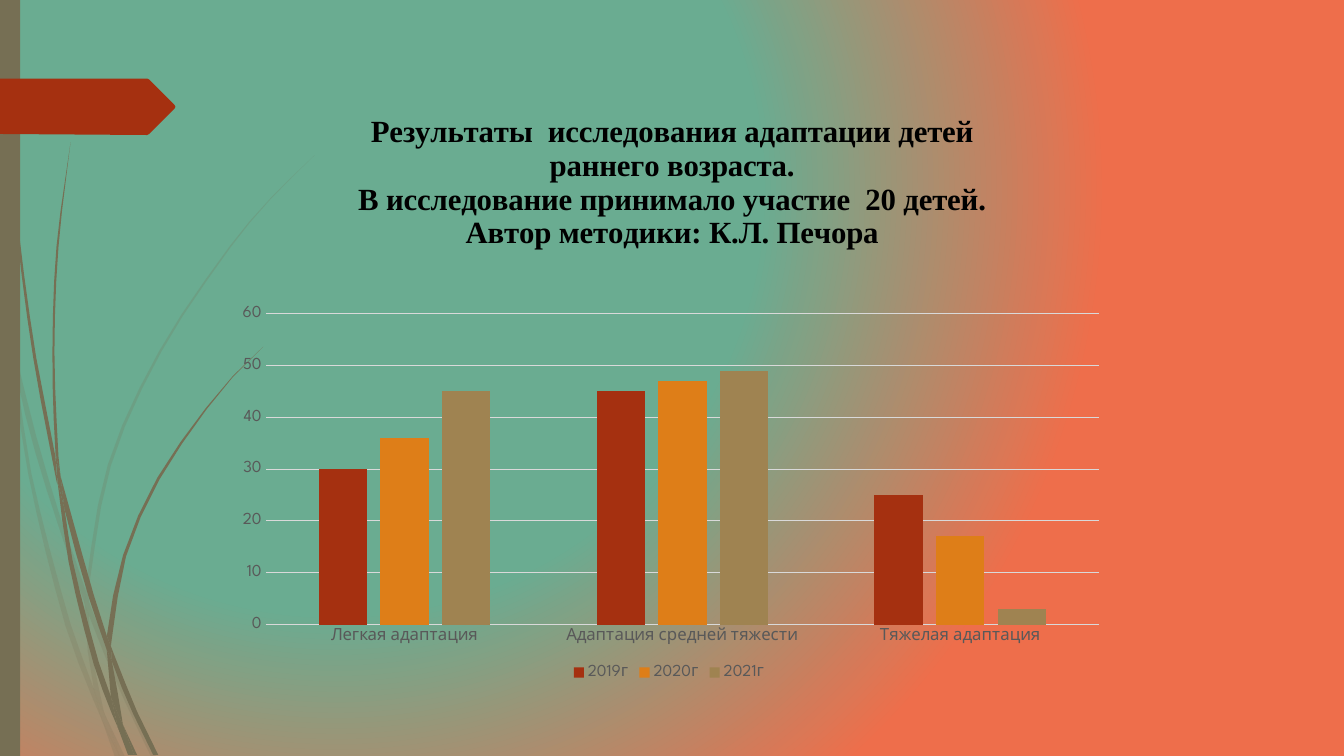
import dataclasses
import math

import lxml.etree
import pptx
import pptx.chart.data
import pptx.dml.color
import pptx.enum.chart
import pptx.enum.shapes
import pptx.enum.text
import pptx.oxml.ns
import pptx.util

Inches = pptx.util.Inches
qn = pptx.oxml.ns.qn


@dataclasses.dataclass(frozen=True)
class Theme:
    green: str = "6AAC91"
    coral: str = "EE6E4B"
    olive: str = "766F54"
    red: str = "A53010"
    orange: str = "DE7E18"
    sand: str = "9F8351"
    black: str = "000000"
    label: str = "595959"
    grid: str = "D9D9D9"
    body_font: str = "League Spartan"
    title_font: str = "Times New Roman"
    title_size: int = 22
    label_size: int = 12
    base_size: int = 10


THEME = Theme()

# Outline nodes of the stems, in inches
PALE_STEMS = [
    [(0.11, 3.5), (0.09, 3.22), (0, 2.82), (0, 2.99), (0.1, 3.44)],
    [(0.58, 5.22), (0.84, 5.99), (0.85, 5.86), (0.62, 5.2), (0.36, 4.33), (0.14, 3.45),
     (0.17, 3.76), (0.35, 4.49)],
    [(0.92, 6.07), (0.88, 5.96), (0.88, 6.1), (1.23, 6.94), (1.5, 7.51), (1.55, 7.51),
     (1.27, 6.92)],
    [(1.19, 7.51), (1.24, 7.51), (1.05, 7.11)],
    [(0.93, 6.83), (0.7, 6.19), (0.31, 4.69), (0.17, 3.76), (0.11, 3.5), (0.28, 4.7),
     (0.65, 6.21), (0.92, 6.93), (1.01, 7.14), (0.99, 7.07)],
    [(0.84, 5.99), (0.87, 6.46), (0.93, 6.83), (0.96, 6.92), (1.05, 7.11), (1.03, 7.06),
     (0.91, 6.46), (0.88, 6.1)],
    [(0.88, 5.84), (1.1, 4.62), (1.6, 3.49), (2.29, 2.45), (2.68, 1.98), (3.12, 1.54),
     (2.68, 1.97), (2.28, 2.44), (1.58, 3.48), (1.07, 4.61), (0.85, 5.84), (0.88, 5.96)],
    [(1.01, 7.14), (1.14, 7.51), (1.19, 7.51)],
    [(0.88, 6.1), (0.88, 5.96), (0.85, 5.86), (0.84, 5.99)],
    [(0.96, 6.92), (0.93, 6.83), (0.99, 7.07), (1.01, 7.14), (1.19, 7.51), (1.05, 7.11)],
]
DARK_STEMS = [
    [(0.07, 1.1), (0.17, 2.33), (0.33, 3.55), (0.56, 4.77), (0.57, 4.81), (0.55, 4.53),
     (0.36, 3.55), (0.19, 2.32), (0.08, 1.09), (0.04, 0), (0.03, 0)],
    [(0.88, 5.92), (1.06, 6.45), (1.06, 6.31), (0.93, 5.9), (0.6, 4.72), (0.64, 5.05)],
    [(1.13, 6.49), (1.1, 6.41), (1.11, 6.56), (1.32, 7.08), (1.52, 7.49), (1.57, 7.49),
     (1.36, 7.06)],
    [(1.1, 6.91), (0.98, 6.57), (0.72, 5.56), (0.64, 5.05), (0.57, 4.77), (0.68, 5.57),
     (0.93, 6.59), (1.11, 7.08), (1.17, 7.22)],
    [(0.6, 4.72), (0.58, 4.53), (0.54, 3.49), (0.58, 2.45), (0.7, 1.41), (0.56, 2.45),
     (0.52, 3.49), (0.55, 4.49)],
    [(1.33, 7.49), (1.36, 7.49), (1.22, 7.19)],
    [(0.57, 4.77), (0.64, 5.05), (0.6, 4.72), (0.55, 4.49)],
    [(1.11, 6.33), (1.25, 5.52), (1.58, 4.76), (2.05, 4.06), (2.31, 3.74), (2.61, 3.44),
     (2.31, 3.73), (2.04, 4.05), (1.56, 4.74), (1.22, 5.51), (1.06, 6.31), (1.1, 6.41)],
    [(1.17, 7.22), (1.27, 7.49), (1.31, 7.49)],
    [(1.06, 6.45), (1.1, 6.91), (1.16, 7.06), (1.22, 7.19), (1.11, 6.56)],
    [(1.06, 6.45), (1.11, 6.56), (1.1, 6.41), (1.06, 6.31)],
    [(1.16, 7.06), (1.1, 6.91), (1.17, 7.22), (1.3, 7.49), (1.33, 7.49), (1.22, 7.19)],
]
POINTER = [(0, 0.78), (1.46, 0.78), (1.48, 0.79), (1.73, 1.04), (1.74, 1.06),
           (1.73, 1.08), (1.48, 1.33), (1.46, 1.34), (0, 1.33)]

TITLE = ["Результаты  исследования адаптации детей раннего возраста.",
         "В исследование принимало участие  20 детей.",
         "Автор методики: К.Л. Печора"]
CATEGORIES = ["Легкая адаптация", "Адаптация средней тяжести", "Тяжелая адаптация"]
SERIES = [("2019г", (30, 45, 25), THEME.red),
          ("2020г", (36, 47, 17), THEME.orange),
          ("2021г", (45, 49, 3), THEME.sand)]


def rgb(color):
    return pptx.dml.color.RGBColor.from_string(color)


def paint(shape, color, opacity=100):
    shape.shadow.inherit = False
    shape.fill.solid()
    shape.fill.fore_color.rgb = rgb(color)
    shape.line.fill.background()
    if opacity < 100:
        tint = next(shape.element.iter(qn("a:srgbClr")))
        lxml.etree.SubElement(tint, qn("a:alpha"), val=str(opacity * 1000))


def smooth_outline(nodes, stride=0.5):
    """Bend the long sides of a closed outline, keeping sharp corners."""
    knots = [complex(*node) for node in nodes]
    count = len(knots)
    sides = [knots[(i + 1) % count] - knots[i] for i in range(count)]
    units = [side / abs(side) for side in sides]

    def heading(knot, side):
        before, after = units[knot - 1], units[knot]
        if (before * after.conjugate()).real < 0.8:
            return units[side]
        span = sides[knot - 1] + sides[knot]
        return span / abs(span)

    points = []
    for i, start in enumerate(knots):
        j = (i + 1) % count
        length = abs(sides[i])
        pull = start + heading(i, i) * length / 3
        push = knots[j] - heading(j, i) * length / 3
        steps = math.ceil(length / stride)
        for t in (step / steps for step in range(steps)):
            u = 1 - t
            point = (u**3 * start + 3 * u * u * t * pull
                     + 3 * u * t * t * push + t**3 * knots[j])
            points.append((point.real, point.imag))
    return points


def add_outline(shapes, nodes, color, opacity=100):
    points = [(Inches(x), Inches(y)) for x, y in nodes]
    builder = shapes.build_freeform(*points[0])
    builder.add_line_segments(points[1:], close=True)
    paint(builder.convert_to_shape(), color, opacity)


def add_stems(slide, stems, opacity=100):
    group = slide.shapes.add_group_shape()
    for nodes in stems:
        add_outline(group.shapes, smooth_outline(nodes), THEME.olive, opacity)


def set_background(slide):
    fill = slide.background.fill
    fill.gradient()
    for stop, place, color in zip(fill.gradient_stops, (0.55, 1), (THEME.green, THEME.coral)):
        stop.position = place
        stop.color.rgb = rgb(color)
    gradient = next(slide.element.iter(qn("a:gradFill")))
    gradient.remove(gradient.find(qn("a:lin")))
    circle = lxml.etree.SubElement(gradient, qn("a:path"), path="circle")
    lxml.etree.SubElement(circle, qn("a:fillToRect"), l="50000", t="50000",
                          r="100000", b="100000")


def style_font(font, size=THEME.label_size, color=THEME.label, name=THEME.body_font, bold=False):
    font.size = pptx.util.Pt(size)
    font.color.rgb = rgb(color)
    font.name = name
    font.bold = bold


def write_text(para, text, **style):
    para.alignment = pptx.enum.text.PP_ALIGN.CENTER
    span = para.add_run()
    span.text = text
    style_font(span.font, **style)


def set_layout(parent, index, **values):
    """Place a chart part by fractions of the chart area."""
    for old in parent.findall(qn("c:layout")):
        parent.remove(old)
    layout = parent.makeelement(qn("c:layout"))
    parent.insert(index, layout)
    manual = lxml.etree.SubElement(layout, qn("c:manualLayout"))
    for name, value in values.items():
        lxml.etree.SubElement(manual, qn("c:" + name), val=str(value))


def add_title(chart):
    chart.has_title = True
    frame = chart.chart_title.text_frame
    for i, text in enumerate(TITLE):
        para = frame.add_paragraph() if i else frame.paragraphs[0]
        write_text(para, text, size=THEME.title_size, color=THEME.black,
                   name=THEME.title_font, bold=True)
    set_layout(next(chart.element.iter(qn("c:title"))), 1, xMode="edge", yMode="edge",
               x=0.15, y=0.04)


def style_axis(axis):
    axis.major_tick_mark = axis.minor_tick_mark = pptx.enum.chart.XL_TICK_MARK.NONE
    style_font(axis.tick_labels.font)


def style_line(line):
    line.color.rgb = rgb(THEME.grid)
    line.width = pptx.util.Pt(0.75)


def add_results_chart(slide):
    data = pptx.chart.data.CategoryChartData()
    data.categories = CATEGORIES
    for name, values, _ in SERIES:
        data.add_series(name, values)
    chart = slide.shapes.add_chart(
        pptx.enum.chart.XL_CHART_TYPE.COLUMN_CLUSTERED,
        Inches(2.19), Inches(0.86), Inches(8.89), Inches(5.93), data).chart
    style_font(chart.font, size=THEME.base_size, color=THEME.black)
    add_title(chart)

    # Columns
    plot = chart.plots[0]
    plot.gap_width, plot.overlap, plot.vary_by_categories = 219, -27, False
    for series, (_, _, color) in zip(plot.series, SERIES):
        series.format.fill.solid()
        series.format.fill.fore_color.rgb = rgb(color)
    set_layout(next(chart.element.iter(qn("c:plotArea"))), 0, layoutTarget="inner",
               xMode="edge", yMode="edge", x=0.05, y=0.38, w=0.93, h=0.52)

    # Axes and legend
    style_axis(chart.category_axis)
    style_line(chart.category_axis.format.line)
    scale = chart.value_axis
    style_axis(scale)
    scale.minimum_scale, scale.maximum_scale, scale.major_unit = 0, 60, 10
    scale.format.line.fill.background()
    style_line(scale.major_gridlines.format.line)
    chart.has_legend = True
    chart.legend.position = pptx.enum.chart.XL_LEGEND_POSITION.BOTTOM
    chart.legend.include_in_layout = False
    style_font(chart.legend.font)


def main():
    deck = pptx.Presentation()
    deck.slide_width, deck.slide_height = Inches(13.33), Inches(7.5)
    slide = deck.slides.add_slide(deck.slide_layouts[6])
    set_background(slide)

    # Decoration on the left edge
    add_stems(slide, PALE_STEMS, opacity=20)
    add_stems(slide, DARK_STEMS)
    band = slide.shapes.add_shape(pptx.enum.shapes.MSO_SHAPE.RECTANGLE,
                                  0, 0, Inches(0.2), Inches(7.5))
    paint(band, THEME.olive)
    add_outline(slide.shapes, POINTER, THEME.red)

    add_results_chart(slide)
    deck.save("out.pptx")


if __name__ == "__main__":
    main()
